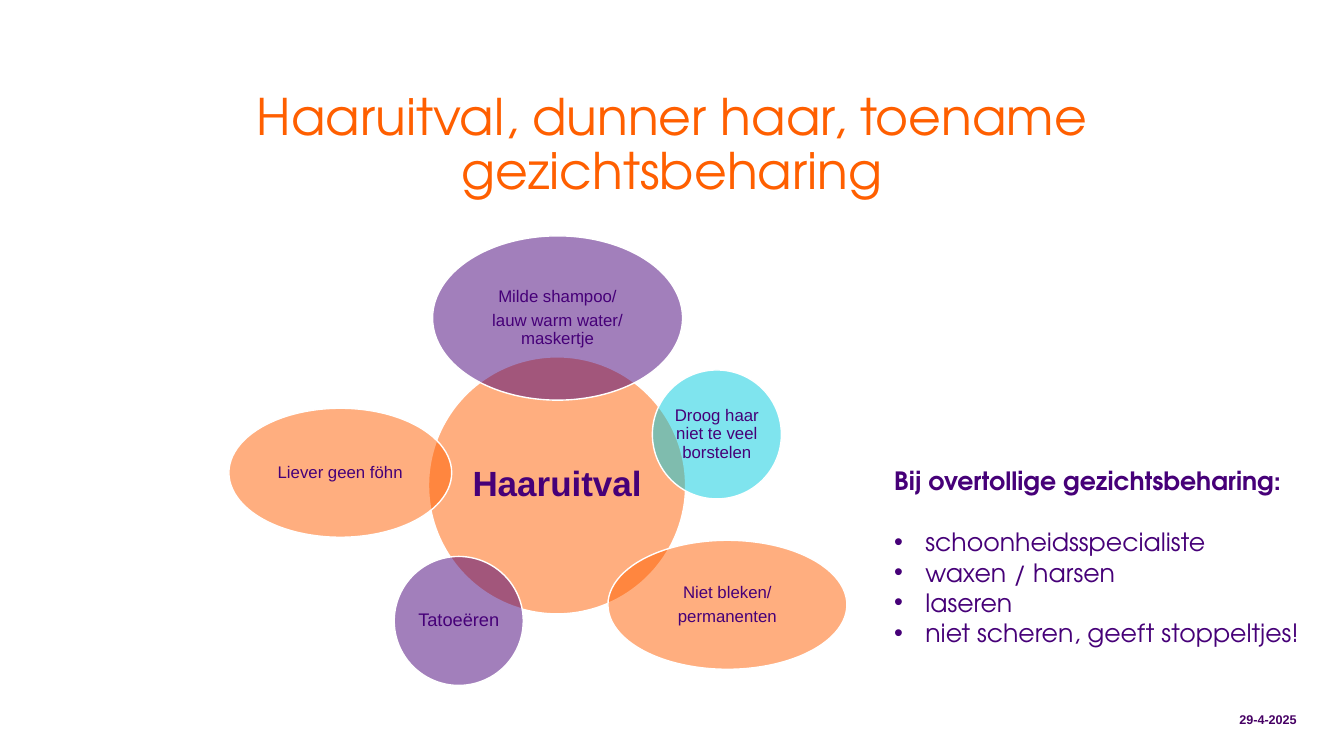
from lxml.etree import SubElement
from pptx import Presentation
from pptx.dml.color import RGBColor
from pptx.enum.shapes import MSO_SHAPE
from pptx.enum.text import MSO_ANCHOR, PP_ALIGN
from pptx.oxml.ns import qn
from pptx.util import Inches, Pt

ORANGE = RGBColor(0xFF, 0x5F, 0x00)
PURPLE = RGBColor(0x46, 0x00, 0x78)
DARK_PURPLE = RGBColor(0x46, 0x00, 0x64)
CYAN = RGBColor(0x00, 0xCB, 0xDE)
WHITE = RGBColor(0xFF, 0xFF, 0xFF)
HEAD_FONT = "TeX Gyre Adventor"
BODY_FONT = "Arial"

TITLE = "Haaruitval, dunner haar, toename gezichtsbeharing"
DATE = "29-4-2025"
HUB = (["Haaruitval"], (4.25, 3.54, 2.55, 2.55), ORANGE, 25, True)
PETALS = [
    (["Milde shampoo/", "lauw warm water/ maskertje"], (4.29, 2.34, 2.48, 1.63), PURPLE, 12, False),
    (["Droog haar niet te veel borstelen"], (6.47, 3.67, 1.28, 1.28), CYAN, 12, False),
    (["Niet bleken/", "permanenten"], (6.03, 5.36, 2.37, 1.28), ORANGE, 12, False),
    (["Tatoeëren"], (3.91, 5.52, 1.28, 1.28), PURPLE, 13, False),
    (["Liever geen föhn"], (2.27, 4.05, 2.21, 1.28), ORANGE, 12, False),
]
ADVICE_HEAD = "Bij overtollige gezichtsbeharing:"
ADVICE = ["schoonheidsspecialiste", "waxen / harsen", "laseren", "niet scheren, geeft stoppeltjes!"]


def write(tf, text, size, font=BODY_FONT, color=PURPLE, bold=False, align=PP_ALIGN.LEFT,
          line=1.0, before=0, after=0, bullet=False):
    p = tf.add_paragraph() if tf.text else tf.paragraphs[0]
    p.alignment = align
    p.line_spacing = line
    p.space_before = Pt(before)
    p.space_after = Pt(after)
    if bullet:
        pPr = p._p.get_or_add_pPr()
        pPr.set("marL", str(Inches(0.31)))
        pPr.set("indent", str(-Inches(0.31)))
        SubElement(pPr, qn("a:buFont")).set("typeface", "Arial")
        SubElement(pPr, qn("a:buChar")).set("char", "•")
    r = p.add_run()
    r.text = text
    r.font.size = Pt(size)
    r.font.name = font
    r.font.bold = bold
    r.font.color.rgb = color


def add_ellipse(s, lines, box, color, size, bold):
    sp = s.shapes.add_shape(MSO_SHAPE.OVAL, *map(Inches, box))
    sp.shadow.inherit = False
    sp.fill.solid()
    sp.fill.fore_color.rgb = color
    clr = sp.fill._xPr.find(qn("a:solidFill"))[0]
    SubElement(clr, qn("a:alpha")).set("val", "50000")
    sp.line.color.rgb = WHITE
    sp.line.width = Pt(1)
    tf = sp.text_frame
    tf.word_wrap = True
    tf.vertical_anchor = MSO_ANCHOR.MIDDLE
    tf.margin_left = tf.margin_right = tf.margin_top = tf.margin_bottom = Inches(0.02)
    for text in lines:
        write(tf, text, size, bold=bold, align=PP_ALIGN.CENTER, line=0.9, after=0.35 * size)


def add_box(s, *box):
    tf = s.shapes.add_textbox(*map(Inches, box)).text_frame
    tf.word_wrap = True
    return tf


def main():
    prs = Presentation()
    prs.slide_width, prs.slide_height = Inches(13.33), Inches(7.5)
    s = prs.slides.add_slide(prs.slide_layouts[5])

    title = s.shapes.title
    title.left, title.top, title.width, title.height = map(Inches, (1.37, 0.86, 10.59, 0.49))
    title.text_frame.word_wrap = True
    title.text_frame.vertical_anchor = MSO_ANCHOR.TOP
    write(title.text_frame, TITLE, 36, font=HEAD_FONT, color=ORANGE,
          align=PP_ALIGN.CENTER, line=0.9)

    tf = add_box(s, 11.69, 6.94, 1.27, 0.4)
    tf.vertical_anchor = MSO_ANCHOR.MIDDLE
    write(tf, DATE, 9, color=DARK_PURPLE, bold=True, align=PP_ALIGN.RIGHT)

    for ellipse in [HUB, *PETALS]:
        add_ellipse(s, *ellipse)

    tf = add_box(s, 8.77, 4.57, 4.5, 1.92)
    write(tf, ADVICE_HEAD, 18, font=HEAD_FONT, bold=True)
    for i, text in enumerate(ADVICE):
        write(tf, text, 18, font=HEAD_FONT, bullet=True, before=0 if i else 22)

    prs.save("out.pptx")


if __name__ == "__main__":
    main()
